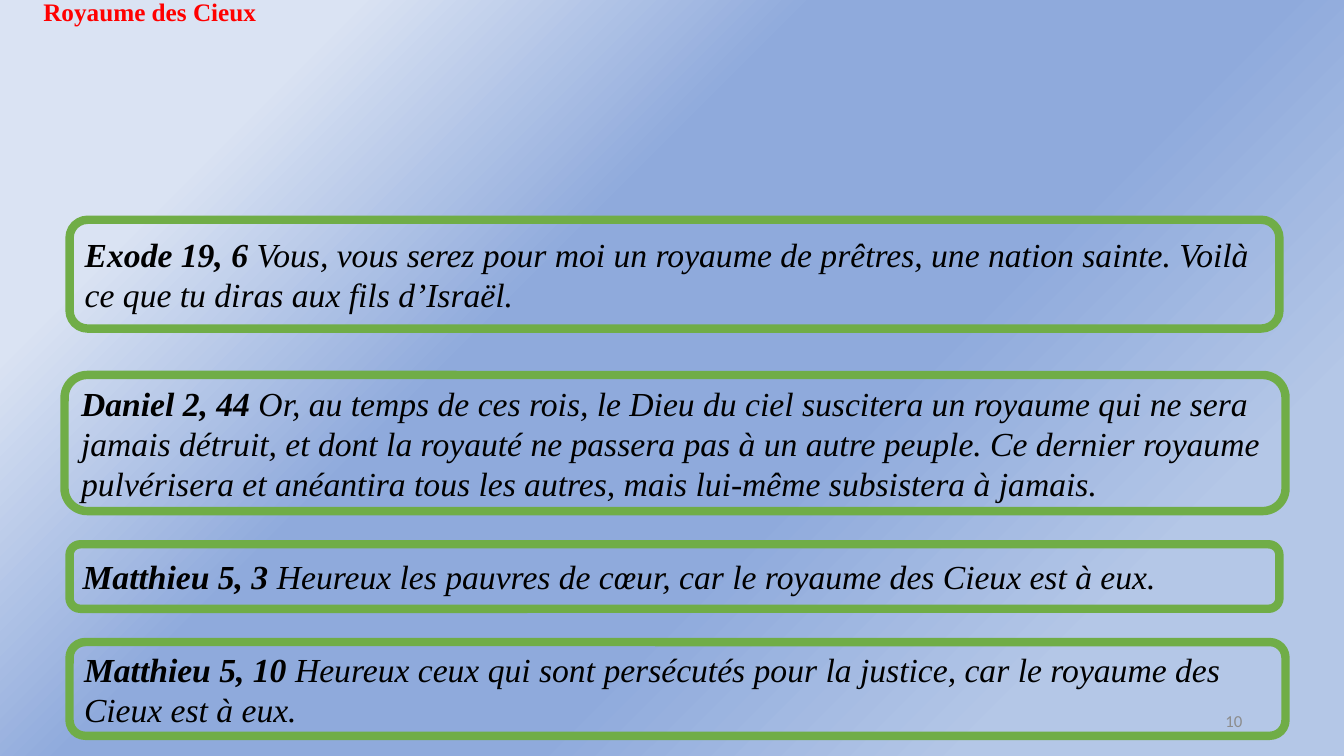
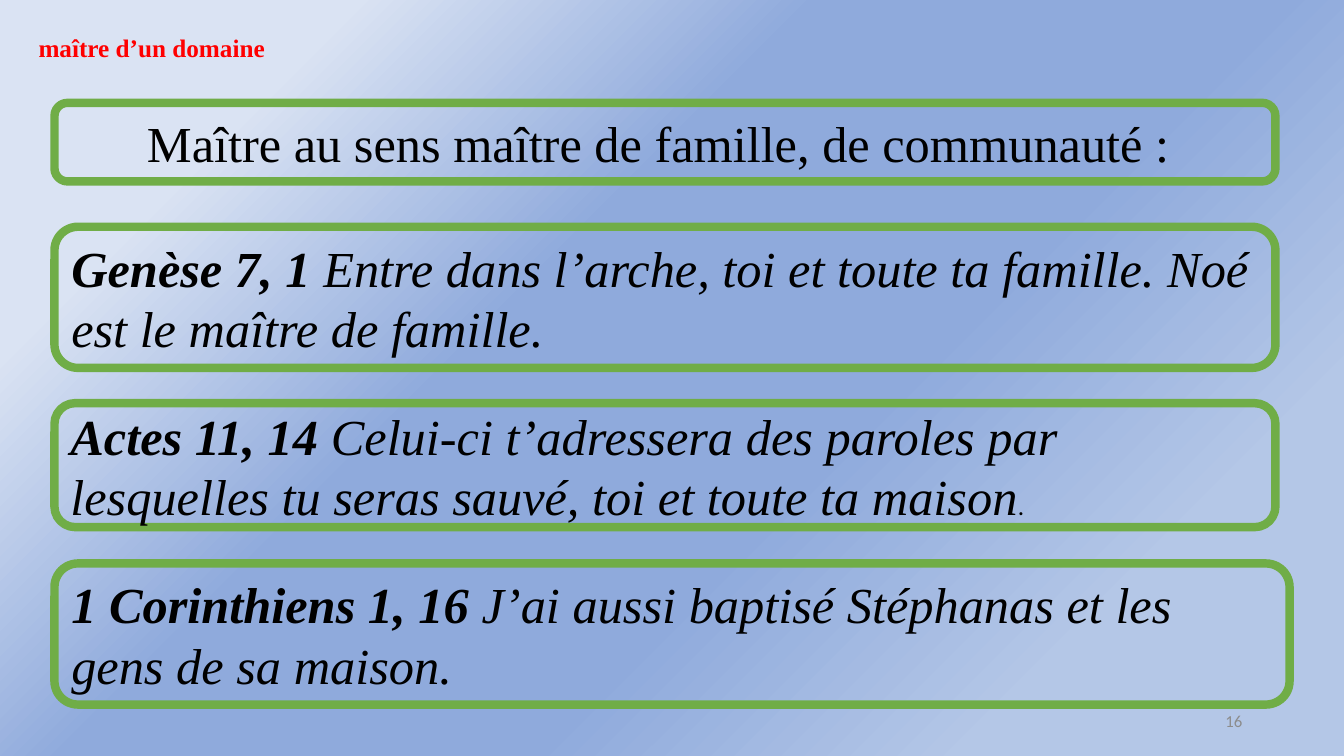
from copy import deepcopy

from pptx import Presentation
from pptx.dml.color import RGBColor
from pptx.enum.shapes import MSO_SHAPE as SHAPE
from pptx.enum.text import MSO_ANCHOR as ANCHOR, MSO_AUTO_SIZE as AUTO, PP_ALIGN as ALIGN
from pptx.oxml.ns import qn
from pptx.util import Inches, Pt

GREEN, RED, BLACK, GREY = "70AD47", "FF0000", "000000", "8C8C8C"
SERIF, SANS = "Times New Roman", "Calibri"
STOPS = [(0.18, "B4C7E7"), (0.39, "8FAADC"), (0.61, "8FAADC"), (0.83, "DAE3F3")]


def rgb(value):
    return RGBColor.from_string(value)


def add_run(p, text, size, color=BLACK, font=SERIF, bold=False, italic=False):
    r = p.add_run()
    r.text = text
    r.font.name = font
    r.font.size = Pt(size)
    r.font.color.rgb = rgb(color)
    r.font.bold = bold
    r.font.italic = italic


def paint_background(s):
    fill = s.background.fill
    fill.gradient()
    fill.gradient_angle = 135
    stop_list = s.element.find(".//" + qn("a:gsLst"))
    while len(stop_list) < len(STOPS):
        stop_list.append(deepcopy(stop_list[0]))
    for stop, (position, color) in zip(fill.gradient_stops, STOPS):
        stop.position = position
        stop.color.rgb = rgb(color)


def add_label(s, x, y, w, align):
    tf = s.shapes.add_textbox(Inches(x), Inches(y), Inches(w), Inches(0.4)).text_frame
    tf.word_wrap = True
    tf.paragraphs[0].alignment = align
    return tf


def add_slide(prs, title, x, y, number):
    s = prs.slides.add_slide(prs.slide_layouts[6])
    paint_background(s)
    tf = add_label(s, x, y, 4.55, ALIGN.CENTER)
    tf.auto_size = AUTO.SHAPE_TO_FIT_TEXT
    add_run(tf.paragraphs[0], title, 18, RED, bold=True)
    tf = add_label(s, 9.42, 6.95, 3, ALIGN.RIGHT)
    tf.vertical_anchor = ANCHOR.MIDDLE
    add_run(tf.paragraphs[0], number, 12, GREY, SANS)
    return s


def add_frame(s, x, y, w, h, align=ALIGN.LEFT):
    sp = s.shapes.add_shape(SHAPE.ROUNDED_RECTANGLE, Inches(x), Inches(y), Inches(w), Inches(h))
    sp.shadow.inherit = False
    sp.fill.background()
    sp.line.color.rgb = rgb(GREEN)
    sp.line.width = Pt(6)
    tf = sp.text_frame
    tf.word_wrap = True
    tf.vertical_anchor = ANCHOR.MIDDLE
    p = tf.paragraphs[0]
    p.alignment = align
    return p


def add_verse(s, box, size, reference, text):
    p = add_frame(s, *box)
    add_run(p, reference + " ", size, bold=True, italic=True)
    add_run(p, text, size, italic=True)
    return p


def build_kingdom(prs):
    s = add_slide(prs, "Royaume des Cieux", -0.79, -0.09, "10")
    verses = [
        ((0.69, 2.18, 12, 1.08), "Exode 19, 6",
         "Vous, vous serez pour moi un royaume de prêtres, une nation sainte. "
         "Voilà ce que tu diras aux fils d’Israël."),
        ((0.64, 3.72, 12.11, 1.35), "Daniel 2, 44",
         "Or, au temps de ces rois, le Dieu du ciel suscitera un royaume qui ne sera "
         "jamais détruit, et dont la royauté ne passera pas à un autre peuple. Ce dernier "
         "royaume pulvérisera et anéantira tous les autres, mais lui-même subsistera à jamais."),
        ((0.69, 5.4, 12, 0.64), "Matthieu 5, 3",
         "Heureux les pauvres de cœur, car le royaume des Cieux est à eux."),
        ((0.69, 6.37, 12.06, 0.93), "Matthieu 5, 10",
         "Heureux ceux qui sont persécutés pour la justice, car le royaume des Cieux est à eux."),
    ]
    for box, reference, text in verses:
        add_verse(s, box, 24, reference, text)


def build_master(prs):
    s = add_slide(prs, "maître d’un domaine", -0.77, 0.27, "16")
    left, width, size = 0.54, 12.11, 36
    p = add_frame(s, left, 1.02, width, 0.78, ALIGN.CENTER)
    add_run(p, "Maître au sens maître de famille, de communauté : ", size)
    add_verse(s, (left, 2.25, width, 1.4), size, "Genèse 7, 1",
              "Entre dans l’arche, toi et toute ta famille. Noé est le maître de famille.")
    p = add_verse(s, (left, 4, width, 1.23), size, "Actes 11, 14",
                  "Celui-ci t’adressera des paroles par lesquelles tu seras sauvé, "
                  "toi et toute ta maison")
    add_run(p, ".", 18, font=SANS, italic=True)
    add_verse(s, (left, 5.59, 12.25, 1.4), size, "1 Corinthiens 1, 16",
              "J’ai aussi baptisé Stéphanas et les gens de sa maison.")


def main():
    prs = Presentation()
    prs.slide_width, prs.slide_height = Inches(13.33), Inches(7.5)
    build_kingdom(prs)
    build_master(prs)
    prs.save("out.pptx")


if __name__ == "__main__":
    main()
